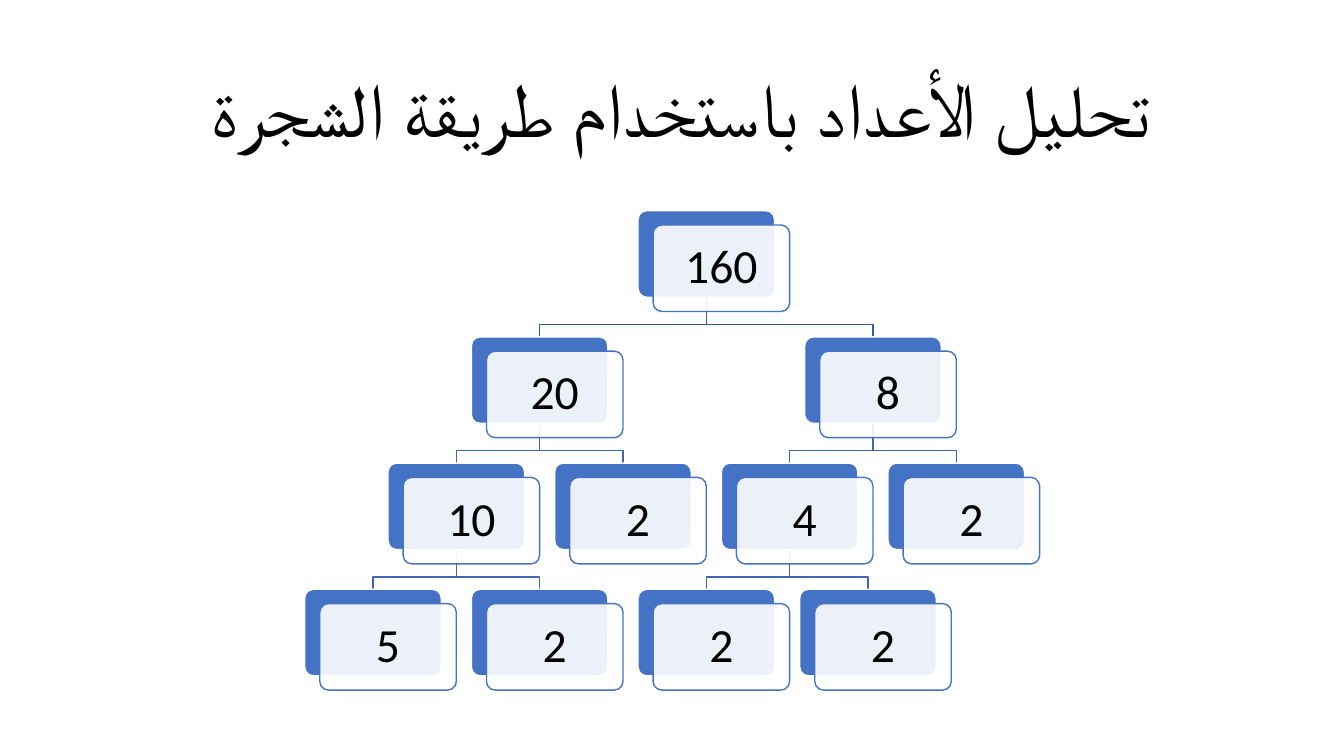
from dataclasses import dataclass

from lxml import etree
from pptx import Presentation
from pptx import util as u
from pptx.dml import color
from pptx.enum import shapes, text
from pptx.oxml import ns


@dataclass(frozen=True)
class Theme:
    """Colours, font and type sizes of the slide."""
    font: str = "Calibri"
    title_size: int = 54
    number_size: int = 34
    line_width: int = 1
    ink: color.RGBColor = color.RGBColor.from_string("000000")
    paper: color.RGBColor = color.RGBColor.from_string("FFFFFF")
    accent: color.RGBColor = color.RGBColor.from_string("4472C4")
    root_line: color.RGBColor = color.RGBColor.from_string("365B9D")
    branch_line: color.RGBColor = color.RGBColor.from_string("3E67B2")


@dataclass(frozen=True)
class Box:
    """A rectangle in centimetres."""
    left: float
    top: float
    width: float
    height: float

    def lengths(self):
        """Return the rectangle as slide lengths."""
        return [u.Cm(side) for side in (self.left, self.top, self.width, self.height)]


@dataclass(frozen=True)
class Factor:
    """A number of the tree, its column and the factors below it."""
    number: int
    column: float
    children: tuple = ()


THEME = Theme()
CARD_WIDTH, CARD_HEIGHT = 3.44, 2.18
COLUMN_STEP, LEVEL_STEP = 2.1, 3.18
SHIFT_X, SHIFT_Y = 0.38, 0.36
ELBOW_DROP = 0.69
TREE = Factor(160, 4, (
    Factor(20, 2, (
        Factor(10, 1, (Factor(5, 0), Factor(2, 2))),
        Factor(2, 3))),
    Factor(8, 6, (
        Factor(4, 5, (Factor(2, 4), Factor(2, 5.94))),
        Factor(2, 7)))))


def style_text(para, size):
    """Centre a paragraph and set its font."""
    para.alignment = text.PP_ALIGN.CENTER
    para.line_spacing = 0.9
    para.font.name = THEME.font
    para.font.size = u.Pt(size)
    para.font.color.rgb = THEME.ink


def add_title(page, box, wording):
    """Place the right-to-left title in its box."""
    title = page.shapes.title
    title.left, title.top, title.width, title.height = box.lengths()
    frame = title.text_frame
    frame.text = wording
    frame.auto_size = text.MSO_AUTO_SIZE.NONE
    frame.vertical_anchor = text.MSO_ANCHOR.MIDDLE
    para = frame.paragraphs[0]
    para._p.get_or_add_pPr().set("rtl", "1")
    style_text(para, THEME.title_size)


def add_card(group, box, fill, line):
    """Draw one rounded card."""
    card = group.shapes.add_shape(shapes.MSO_SHAPE.ROUNDED_RECTANGLE, *box.lengths())
    card.adjustments[0] = 0.1
    card.shadow.inherit = False
    card.fill.solid()
    card.fill.fore_color.rgb = fill
    card.line.color.rgb = line
    card.line.width = u.Pt(THEME.line_width)
    return card


def add_number(group, box, number):
    """Draw a solid card and a translucent card with the number in front."""
    add_card(group, box, THEME.accent, THEME.paper)
    front = Box(box.left + SHIFT_X, box.top + SHIFT_Y, box.width, box.height)
    card = add_card(group, front, THEME.paper, THEME.accent)
    tint = card.fill._xPr.find(".//" + ns.qn("a:srgbClr"))
    etree.SubElement(tint, ns.qn("a:alpha"), val="90000")
    frame = card.text_frame
    frame.word_wrap = True
    frame.vertical_anchor = text.MSO_ANCHOR.MIDDLE
    frame.margin_left = frame.margin_right = u.Cm(0.36)
    frame.margin_top = frame.margin_bottom = u.Cm(0.36)
    frame.text = str(number)
    style_text(frame.paragraphs[0], THEME.number_size)


def add_branch(group, parent, child, line):
    """Draw the elbow line from a parent card to a child card."""
    start_x, end_x = (box.left + box.width / 2 for box in (parent, child))
    start_y = parent.top + parent.height
    elbow_y = start_y + ELBOW_DROP
    points = [(start_x, elbow_y), (end_x, elbow_y), (end_x, child.top)]
    builder = group.shapes.build_freeform(u.Cm(start_x), u.Cm(start_y))
    builder.add_line_segments([(u.Cm(x), u.Cm(y)) for x, y in points], close=False)
    branch = builder.convert_to_shape()
    branch.shadow.inherit = False
    branch.fill.background()
    branch.line.color.rgb = line
    branch.line.width = u.Pt(THEME.line_width)


def place_factors(factor, area, level=0, parent=None):
    """List each factor with its level, its box and its parent's box."""
    box = Box(area.left + factor.column * COLUMN_STEP, area.top + level * LEVEL_STEP,
              CARD_WIDTH, CARD_HEIGHT)
    placed = [(factor, level, box, parent)]
    for child in factor.children:
        placed += place_factors(child, area, level + 1, box)
    return placed


def add_tree(page, area, root):
    """Draw the factor tree, with its branches behind its cards."""
    group = page.shapes.add_group_shape()
    placed = place_factors(root, area)
    for _, level, box, parent in placed[1:]:
        line = THEME.root_line if level == 1 else THEME.branch_line
        add_branch(group, parent, box, line)
    for factor, _, box, _ in placed:
        add_number(group, box, factor.number)


def main():
    """Build the slide and save the deck."""
    deck = Presentation()
    deck.slide_width, deck.slide_height = u.Cm(33.87), u.Cm(19.05)
    page = deck.slides.add_slide(deck.slide_layouts[5])
    add_title(page, Box(2.33, 1.01, 29.21, 3.68), "تحليل الأعداد باستخدام طريقة الشجرة ")
    add_tree(page, Box(7.68, 5.31, 18.52, 12.08), TREE)
    deck.save("out.pptx")


if __name__ == "__main__":
    main()
